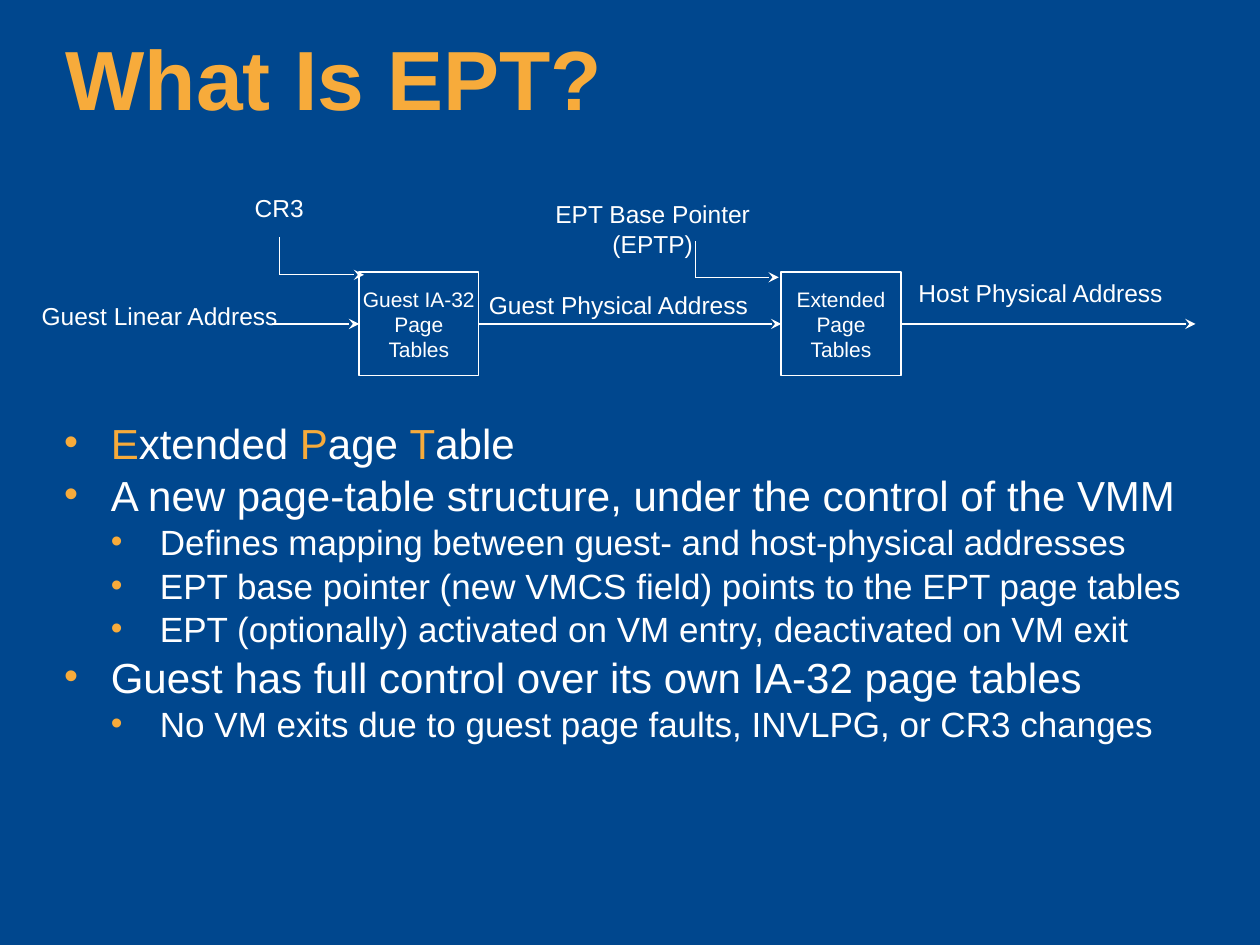
"""Build the slide that explains Extended Page Tables."""
import lxml.etree
import pptx
import pptx.dml.color
import pptx.enum.shapes
import pptx.enum.text
import pptx.oxml.ns
import pptx.util

Cm, Pt = pptx.util.Cm, pptx.util.Pt
qn = pptx.oxml.ns.qn
PP_ALIGN = pptx.enum.text.PP_ALIGN
ANCHOR = pptx.enum.text.MSO_ANCHOR
FIT = pptx.enum.text.MSO_AUTO_SIZE
BLUE, ORANGE, WHITE = "00478E", "F7AB3B", "FFFFFF"


def rgb(value):
    return pptx.dml.color.RGBColor.from_string(value)


def apply(target, values):
    for name, value in values.items():
        setattr(target, name, value)


deck = pptx.Presentation()
apply(deck, {"slide_width": Cm(25.4), "slide_height": Cm(19.05)})
slide = deck.slides.add_slide(deck.slide_layouts[1])
slide.background.fill.solid()
slide.background.fill.fore_color.rgb = rgb(BLUE)

title = slide.shapes.title
apply(title, {"left": Cm(1.07), "top": Cm(0.64), "width": Cm(23.32), "height": Cm(2.08)})
title.text_frame.text = "What Is EPT?"
apply(title.text_frame, {"auto_size": FIT.NONE, "vertical_anchor": ANCHOR.TOP})
heading = title.text_frame.paragraphs[0]
apply(heading, {"alignment": PP_ALIGN.LEFT, "line_spacing": 0.9})
apply(heading.font, {"name": "Arial", "size": Pt(48), "bold": True})
heading.font.color.rgb = rgb(ORANGE)

body = slide.placeholders[1]
apply(body, {"left": Cm(1.04), "top": Cm(8.53), "width": Cm(23.29), "height": Cm(6.7)})
apply(body.text_frame, {"auto_size": FIT.NONE, "vertical_anchor": ANCHOR.TOP})
points = [
    (0, [("E", ORANGE), ("xtended ", WHITE), ("P", ORANGE), ("age ", WHITE),
         ("T", ORANGE), ("able", WHITE)]),
    (0, [("A new page-table structure, under the control of the VMM", WHITE)]),
    (1, [("Defines mapping between guest- and host-physical addresses", WHITE)]),
    (1, [("EPT base pointer (new VMCS field) points to the EPT page tables", WHITE)]),
    (1, [("EPT (optionally) activated on VM entry, deactivated on VM exit", WHITE)]),
    (0, [("Guest has full control over its own IA-32 page tables", WHITE)]),
    (1, [("No VM exits due to guest page faults, INVLPG, or CR3 changes", WHITE)]),
]
levels = [
    {"size": Pt(24), "before": Pt(7.9), "margin": Cm(0.94), "hanging": Cm(0.94)},
    {"size": Pt(20), "before": Pt(6.8), "margin": Cm(1.93), "hanging": Cm(0.99)},
]
for index, (level, pieces) in enumerate(points):
    point = body.text_frame.add_paragraph() if index else body.text_frame.paragraphs[0]
    form = levels[level]
    properties = point._p.get_or_add_pPr()
    properties.set("marL", str(form["margin"]))
    properties.set("indent", str(-form["hanging"]))
    bullet_color = lxml.etree.SubElement(properties, qn("a:buClr"))
    lxml.etree.SubElement(bullet_color, qn("a:srgbClr"), val=ORANGE)
    lxml.etree.SubElement(properties, qn("a:buSzPct"), val="95000")
    lxml.etree.SubElement(properties, qn("a:buFont"), typeface="Arial")
    lxml.etree.SubElement(properties, qn("a:buChar"), char="•")
    apply(point, {"level": level, "line_spacing": 0.75,
                  "space_before": form["before"] if index else Pt(0)})
    apply(point.font, {"name": "Arial", "size": form["size"]})
    for words, color in pieces:
        run = point.add_run()
        run.text = words
        apply(run.font, {"name": "Arial", "size": form["size"]})
        run.font.color.rgb = rgb(color)

captions = []
tables = []
for left, words in [(7.24, "Guest IA-32\nPage\nTables"), (15.75, "Extended\nPage\nTables")]:
    table = slide.shapes.add_shape(pptx.enum.shapes.MSO_SHAPE.RECTANGLE,
                                   Cm(left), Cm(5.49), Cm(2.41), Cm(2.08))
    table.shadow.inherit = False
    table.fill.solid()
    table.fill.fore_color.rgb = rgb(BLUE)
    table.line.color.rgb = rgb(WHITE)
    table.line.width = Pt(1)
    table.text_frame.text = words
    apply(table.text_frame, {"word_wrap": False, "vertical_anchor": ANCHOR.MIDDLE})
    tables.append(table)
    captions.append((table, 12))
guest, extended = tables

for words, left, top, width, height, wrap in [
    ("Guest Linear Address", 0.58, 5.94, 5.28, 0.84, False),
    ("Guest Physical Address", 9.6, 5.72, 5.74, 0.84, False),
    ("Host Physical Address", 18.26, 5.49, 5.44, 0.84, False),
    ("EPT Base Pointer (EPTP)", 10.62, 3.89, 5.08, 1.4, True),
    ("CR3", 4.88, 3.76, 1.5, 0.84, False),
]:
    label = slide.shapes.add_textbox(Cm(left), Cm(top), Cm(width), Cm(height))
    label.text_frame.text = words
    label.text_frame.word_wrap = wrap
    captions.append((label, 14))

for holder, size in captions:
    for line in holder.text_frame.paragraphs:
        line.alignment = PP_ALIGN.CENTER
        apply(line.font, {"name": "Arial", "size": Pt(size)})
        line.font.color.rgb = rgb(WHITE)

for start, end, source, target, arrow in [
    ((5.49, 6.53), (7.24, 6.53), None, guest, True),
    ((9.65, 6.53), (15.75, 6.53), guest, extended, True),
    ((18.16, 6.53), (24.1, 6.53), extended, None, True),
    ((14.02, 5.59), (15.7, 5.59), None, None, True),
    ((14.02, 5.59), (14.02, 4.85), None, None, False),
    ((5.64, 5.54), (7.34, 5.54), None, None, True),
    ((5.64, 5.54), (5.64, 4.78), None, None, False),
]:
    flow = slide.shapes.add_connector(pptx.enum.shapes.MSO_CONNECTOR.STRAIGHT,
                                      *map(Cm, start + end))
    if source:
        flow.begin_connect(source, 3)
    if target:
        flow.end_connect(target, 1)
    flow.line.color.rgb = rgb(WHITE)
    flow.line.width = Pt(0.75)
    if arrow:
        lxml.etree.SubElement(flow.line._get_or_add_ln(), qn("a:tailEnd"), type="stealth")
    lxml.etree.SubElement(flow._element.spPr, qn("a:effectLst"))

deck.save("out.pptx")
